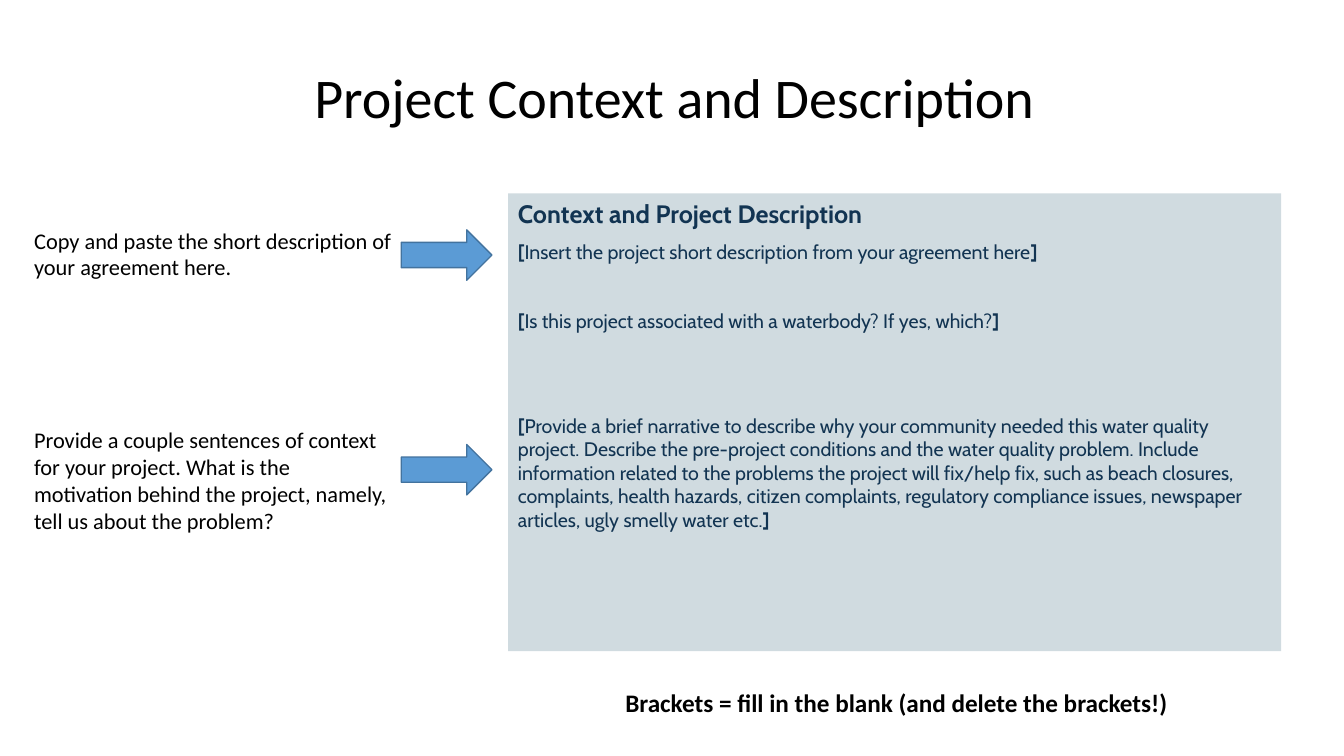
"""Build the project context slide with its guide notes."""
from pptx import Presentation
from pptx import util as u
from pptx.dml.color import RGBColor
from pptx.enum import shapes, text

HUES = {"ink": "000000", "navy": "123452", "panel": "D0DBE0",
        "arrow": "5B9BD5", "edge": "43739E"}
LINE = 24.8
PROMPTS = [
    (0, "Insert the project short description from your agreement here"),
    (1, "Is this project associated with a waterbody? If yes, which?"),
    (2, "Provide a brief narrative to describe why your community needed this "
        "water quality project. Describe the pre-project conditions and the "
        "water quality problem. Include information related to the problems "
        "the project will fix/help fix, such as beach closures, complaints, "
        "health hazards, citizen complaints, regulatory compliance issues, "
        "newspaper articles, ugly smelly water etc."),
]
NOTES = [
    (158.4, 46.1, 164.2,
     "Copy and paste the short description of your agreement here."),
    (301, 85, 317.5,
     "Provide a couple sentences of context for your project. What is the "
     "motivation behind the project, namely, tell us about the problem?"),
]


def hue(name):
    return RGBColor.from_string(HUES[name])


def assign(item, **form):
    for key, value in form.items():
        setattr(item, key, value)


def add_run(para, words, size, bold=False, face="Calibri", tint="ink"):
    run = para.add_run()
    run.text = words
    assign(run.font, name=face, size=u.Pt(size), bold=bold)
    run.font.color.rgb = hue(tint)


def add_label(slide, box, words, size, bold=False, para=None, **frame):
    label = slide.shapes.add_textbox(*map(u.Pt, box)).text_frame
    assign(label, **{"word_wrap": True, **frame})
    assign(label.paragraphs[0], **(para or {}))
    add_run(label.paragraphs[0], words, size, bold)


def add_block(slide, kind, box, fill, edge=None):
    block = slide.shapes.add_shape(kind, *map(u.Pt, box))
    block.shadow.inherit = False
    block.fill.solid()
    block.fill.fore_color.rgb = hue(fill)
    if edge:
        block.line.color.rgb = hue(edge)
        block.line.width = u.Pt(1)
    else:
        block.line.fill.background()
    return block


def add_panel(slide):
    panel = add_block(slide, shapes.MSO_SHAPE.RECTANGLE,
                      (362.9, 138.2, 552.2, 326.9), "panel")
    frame = panel.text_frame
    assign(frame, word_wrap=True, vertical_anchor=text.MSO_ANCHOR.TOP)
    style = {"face": "Cabin", "tint": "navy"}
    form = {"alignment": text.PP_ALIGN.LEFT, "space_after": u.Pt(8)}
    head = frame.paragraphs[0]
    assign(head, **form)
    add_run(head, "Context and Project Description", 18, True, **style)
    for gap, words in PROMPTS:
        para = frame.add_paragraph()
        assign(para, space_before=u.Pt(gap * LINE), **form)
        for part, bold in (("[", True), (words, False), ("]", True)):
            add_run(para, part, 14, bold, **style)


def main():
    deck = Presentation()
    assign(deck, slide_width=u.Pt(960), slide_height=u.Pt(540))
    slide = deck.slides.add_slide(deck.slide_layouts[6])
    mid = {"alignment": text.PP_ALIGN.CENTER}
    grow = text.MSO_AUTO_SIZE.SHAPE_TO_FIT_TEXT
    add_label(slide, (67.7, 19.4, 828, 104.4),
              "Project Context and Description", 40,
              para={"line_spacing": 0.9, **mid},
              vertical_anchor=text.MSO_ANCHOR.MIDDLE)
    add_panel(slide)
    for top, high, point, words in NOTES:
        add_label(slide, (17.3, top, 270, high), words, 16, auto_size=grow)
        add_block(slide, shapes.MSO_SHAPE.RIGHT_ARROW,
                  (286.6, point, 64.8, 36), "arrow", "edge")
    add_label(slide, (437.8, 487.4, 405.4, 28.8),
              "Brackets = fill in the blank (and delete the brackets!)",
              18, True, mid, word_wrap=False, auto_size=grow)
    deck.save("out.pptx")


if __name__ == "__main__":
    main()
